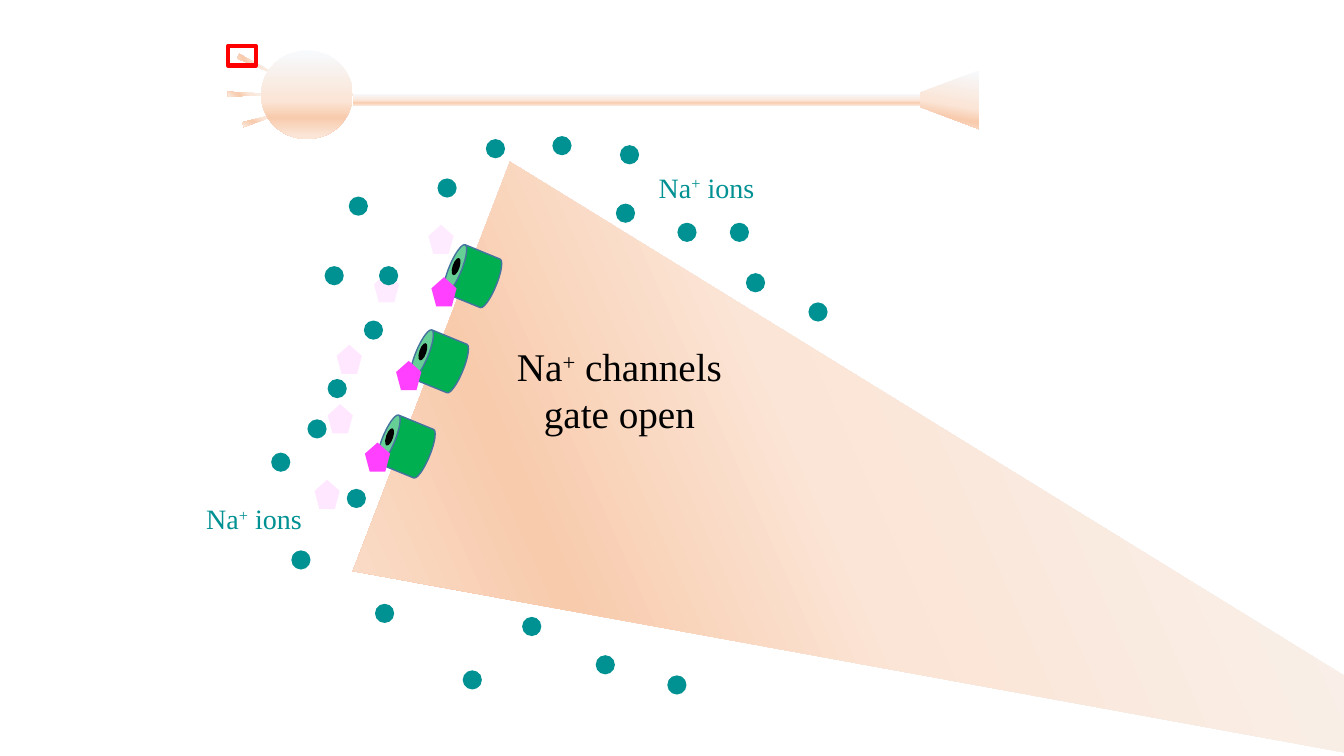
from dataclasses import dataclass

import pptx
import pptx.dml.color
import pptx.enum.shapes
import pptx.enum.text
import pptx.oxml
import pptx.oxml.ns
import pptx.util

SHAPE = pptx.enum.shapes.MSO_SHAPE
CELL = 0.1  # inches per grid column and row
COLUMNS, ROWS = 133.33, 75


@dataclass(frozen=True)
class Theme:
    font: str = "Times New Roman"
    title_size: int = 28
    label_size: int = 20
    black: str = "000000"
    ion: str = "009193"
    transmitter: str = "FF40FF"
    channel: str = "00B050"
    channel_edge: str = "43739E"
    marker: str = "FF0000"
    membrane: tuple = ((0, "F7FAFD"), (57, "FBE5D6"), (76, "F8CBAD"), (96, "FBE5D6"))


THEME = Theme()

# Left column and top row of each item
IONS = [
    (34.6, 19.5), (32.2, 26.4), (37.6, 26.4), (26.9, 44.9), (30.5, 41.6),
    (36.1, 31.8), (34.4, 48.5), (54.8, 13.5), (43.4, 17.7), (37.2, 59.9),
    (48.2, 13.8), (32.5, 37.6), (28.9, 54.6), (66.2, 67), (51.8, 61.2),
    (45.9, 66.5), (59.1, 65), (80.2, 30), (61.5, 14.4), (61.1, 20.2),
    (72.4, 22.1), (67.2, 22.1), (74, 27.1),
]
FREE_TRANSMITTERS = [
    (37.1, 27.1, 10), (42.5, 22.3, 10), (31.2, 47.6, 12), (32.5, 40.1, 12), (33.4, 34.2, 12),
]
BOUND_TRANSMITTERS = [(42.8, 27.5), (36.2, 43.9), (39.3, 35.8)]
DENDRITES = [(25.6, 4.2, 116), (24.8, 6.9, 90), (26.2, 9.2, 73)]
CHANNEL_COUNT = 3
CHANNEL_START = (44.3, 24.9)
CHANNEL_STEP = (-3.3, 8.45)


def grid(cells):
    return pptx.util.Inches(cells * CELL)


def rgb(value):
    return pptx.dml.color.RGBColor.from_string(value)


def add_shape(page, kind, left, top, width, height, fill=None, line=None,
              line_width=1, rotation=0, opacity=100):
    shape = page.shapes.add_shape(kind, grid(left), grid(top), grid(width), grid(height))
    shape.shadow.inherit = False
    shape.rotation = rotation
    if fill:
        shape.fill.solid()
        shape.fill.fore_color.rgb = rgb(fill)
    else:
        shape.fill.background()
    if opacity < 100:
        color = shape.fill._xPr.find(".//" + pptx.oxml.ns.qn("a:srgbClr"))
        alpha = color.makeelement(pptx.oxml.ns.qn("a:alpha"), {"val": str(opacity * 1000)})
        color.append(alpha)
    if line:
        shape.line.color.rgb = rgb(line)
        shape.line.width = pptx.util.Pt(line_width)
    else:
        shape.line.fill.background()
    return shape


def add_membrane(page, kind, left, top, width, height, angle, rotation=0):
    """Add a neuron part with the shared gradient; angle is clockwise degrees."""
    shape = add_shape(page, kind, left, top, width, height, rotation=rotation)
    shape.fill.gradient()
    gradient = shape.fill._xPr.find(pptx.oxml.ns.qn("a:gradFill"))
    stops = gradient.find(pptx.oxml.ns.qn("a:gsLst"))
    for stop in list(stops):
        stops.remove(stop)
    for position, color in THEME.membrane:
        stops.append(pptx.oxml.parse_xml(
            f'<a:gs {pptx.oxml.ns.nsdecls("a")} pos="{position * 1000}">'
            f'<a:srgbClr val="{color}"/></a:gs>'))
    gradient.find(pptx.oxml.ns.qn("a:lin")).set("ang", str(angle * 60000))
    return shape


def add_text(page, text, left, top, width, height, size, color):
    """Add centred text; parts between carets are superscript."""
    box = page.shapes.add_textbox(grid(left), grid(top), grid(width), grid(height))
    frame = box.text_frame
    frame.word_wrap = True
    frame.auto_size = pptx.enum.text.MSO_AUTO_SIZE.SHAPE_TO_FIT_TEXT
    for number, content in enumerate(text.split("\n")):
        para = frame.add_paragraph() if number else frame.paragraphs[0]
        para.alignment = pptx.enum.text.PP_ALIGN.CENTER
        for order, part in enumerate(content.split("^")):
            span = para.add_run()
            span.text = part
            span.font.name = THEME.font
            span.font.size = pptx.util.Pt(size)
            span.font.color.rgb = rgb(color)
            if order % 2:
                span.font._element.set("baseline", "30000")


def add_neuron(page):
    add_membrane(page, SHAPE.ISOSCELES_TRIANGLE, 75.1, -0.8, 43.5, 115.8, 45, rotation=111)
    for left, top, rotation in DENDRITES:
        add_membrane(page, SHAPE.ISOSCELES_TRIANGLE, left, top, 0.5, 4.9, 45, rotation=rotation)
    add_membrane(page, SHAPE.OVAL, 25.9, 5, 9.1, 8.8, 90)
    add_membrane(page, SHAPE.RECTANGLE, 35, 9.3, 56.4, 1.2, 90)
    terminal = add_membrane(page, SHAPE.TRAPEZOID, 91.3, 7, 5.8, 5.8, 190, rotation=270)
    terminal.adjustments[0] = 0.377
    add_shape(page, SHAPE.RECTANGLE, 22.6, 4.6, 2.8, 1.9, line=THEME.marker, line_width=3)


def add_transmitter(page, left, top, opacity=100):
    add_shape(page, SHAPE.REGULAR_PENTAGON, left, top, 2.5, 2.9,
              fill=THEME.transmitter, opacity=opacity)


def add_channels(page):
    """Draw the channels, then the bound transmitters, then the open pores."""
    places = [(CHANNEL_START[0] + i * CHANNEL_STEP[0], CHANNEL_START[1] + i * CHANNEL_STEP[1])
              for i in range(CHANNEL_COUNT)]
    for left, top in places:
        add_shape(page, SHAPE.CAN, left, top, 5.2, 5, fill=THEME.channel,
                  line=THEME.channel_edge, rotation=292.3)
    for left, top in BOUND_TRANSMITTERS:
        add_transmitter(page, left, top)
    for left, top in places:
        add_shape(page, SHAPE.OVAL, left + 0.6, top + 0.65, 0.7, 1.8,
                  fill=THEME.black, rotation=19)


def main():
    deck = pptx.Presentation()
    deck.slide_width, deck.slide_height = grid(COLUMNS), grid(ROWS)
    page = deck.slides.add_slide(deck.slide_layouts[6])
    add_neuron(page)
    for left, top, opacity in FREE_TRANSMITTERS:
        add_transmitter(page, left, top, opacity=opacity)
    add_channels(page)
    add_text(page, "Na^+^ channels\ngate open", 46.9, 33.5, 29.1, 10.4,
             size=THEME.title_size, color=THEME.black)
    for left, top in IONS:
        add_shape(page, SHAPE.OVAL, left, top, 1.9, 1.9, fill=THEME.ion)
    for left, top in [(63.8, 16.4), (18.9, 49.3)]:
        add_text(page, "Na^+^ ions", left, top, 12.6, 4.4,
                 size=THEME.label_size, color=THEME.ion)
    deck.save("out.pptx")


if __name__ == "__main__":
    main()
